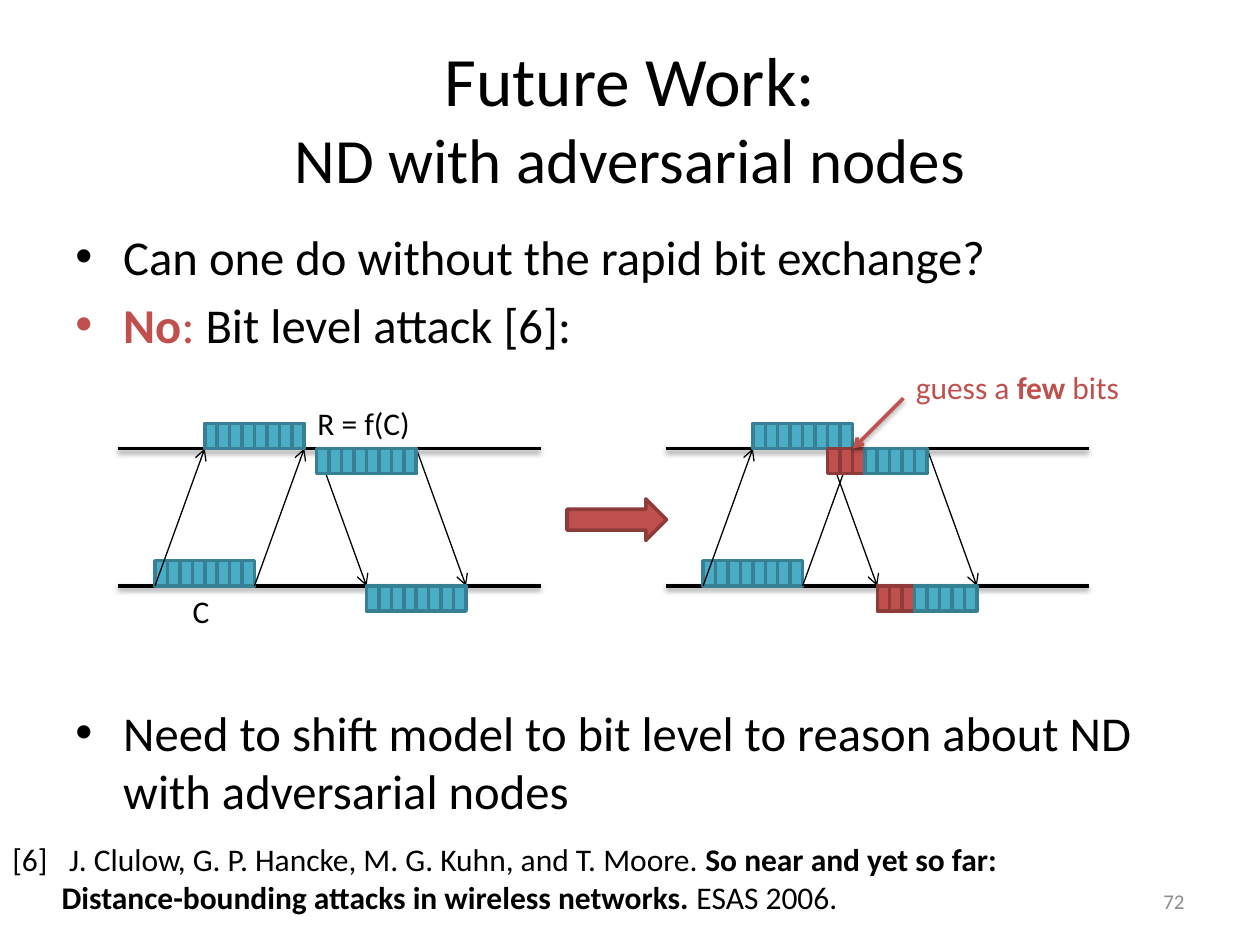
from lxml import etree
from pptx import Presentation
from pptx.dml.color import RGBColor
from pptx.enum import shapes, text
from pptx.oxml import ns
from pptx.util import Inches, Pt

BLACK = RGBColor(0x00, 0x00, 0x00)
GRAY = RGBColor(0x8C, 0x8C, 0x8C)
RED = RGBColor(0xC0, 0x50, 0x4D)
DARK_RED = RGBColor(0x8E, 0x3B, 0x39)
TEAL = RGBColor(0x4B, 0xAC, 0xC6)
DARK_TEAL = RGBColor(0x37, 0x7F, 0x92)

PACKET_BITS = 8
PACKET_WIDTH = 0.79
BIT = PACKET_WIDTH / PACKET_BITS
BIT_HEIGHT = 0.2
UPPER, LOWER = 3.56, 4.65  # the two node timelines
FLIGHT = 4  # signal travel time, in bits

deck = Presentation()
deck.slide_width, deck.slide_height = Inches(10), Inches(7.5)
page = deck.slides.add_slide(deck.slide_layouts[6])


def add_text(left, top, width, height, paragraphs, align=text.PP_ALIGN.LEFT,
             anchor=text.MSO_ANCHOR.TOP, wrap=True):
    """Each paragraph is a list of (words, size, color, bold) runs."""
    box = page.shapes.add_textbox(Inches(left), Inches(top), Inches(width), Inches(height))
    box.text_frame.word_wrap = wrap
    box.text_frame.vertical_anchor = anchor
    for number, runs in enumerate(paragraphs):
        para = box.text_frame.add_paragraph() if number else box.text_frame.paragraphs[0]
        para.alignment = align
        for words, size, color, bold in runs:
            span = para.add_run()
            span.text = words
            span.font.name = "Calibri"
            span.font.size = Pt(size)
            span.font.color.rgb = color
            span.font.bold = bold
    return box.text_frame.paragraphs


def add_line(x1, y1, x2, y2, color, weight, arrow=False, shadow=False):
    line = page.shapes.add_connector(shapes.MSO_CONNECTOR.STRAIGHT, Inches(x1), Inches(y1),
                                     Inches(x2), Inches(y2))
    line.line.color.rgb = color
    line.line.width = Pt(weight)
    if arrow:
        etree.SubElement(line.line._get_or_add_ln(), ns.qn("a:tailEnd"), type="arrow")
    effects = etree.SubElement(line._element.spPr, ns.qn("a:effectLst"))
    if shadow:
        outer = etree.SubElement(effects, ns.qn("a:outerShdw"), blurRad=str(Pt(3.1)),
                                 dist=str(Pt(1.6)), dir="5400000", rotWithShape="0")
        shade = etree.SubElement(outer, ns.qn("a:srgbClr"), val=str(BLACK))
        etree.SubElement(shade, ns.qn("a:alpha"), val="38000")


# Title and bullets
add_text(0.5, 0.3, 9, 1.25,
         [[("Future Work:", 39.6, BLACK, False)],
          [("ND with adversarial nodes", 36, BLACK, False)]],
         text.PP_ALIGN.CENTER, text.MSO_ANCHOR.MIDDLE)

question = add_text(0.5, 1.75, 9, 1.15, [
    [("Can one do without the rapid bit exchange?", 27.8, BLACK, False)],
    [("No", 27.8, RED, True), (":", 27.8, RED, False),
     (" Bit level attack [6]:", 27.8, BLACK, False)]])
conclusion = add_text(0.5, 5.53, 9, 1.1, [
    [("Need to shift model to bit level to reason about ND with adversarial nodes",
      27.8, BLACK, False)]])
for para in question + conclusion:
    para.space_before = Pt(5.56)
    props = para._p.get_or_add_pPr()
    props.set("marL", str(Inches(0.38)))
    props.set("indent", str(Inches(-0.38)))
    etree.SubElement(props, ns.qn("a:buFont"), typeface="Arial")
    etree.SubElement(props, ns.qn("a:buChar"), char="•")

add_text(7.17, 6.95, 2.33, 0.4, [[("72", 12, GRAY, False)]],
         text.PP_ALIGN.RIGHT, text.MSO_ANCHOR.MIDDLE)

# Timelines: (start of the challenge, reply offset in bits, guessed bits)
for start, reply, guessed in ((1.23, 13, 0), (5.58, 10, 3)):
    for lane in (LOWER, UPPER):
        add_line(start - 3 * BIT, lane, start + 31 * BIT, lane, BLACK, 2, shadow=True)

    packets = ((0, LOWER - BIT_HEIGHT, 0), (FLIGHT, UPPER - BIT_HEIGHT, 0),
               (reply, UPPER, guessed), (reply + FLIGHT, LOWER, guessed))
    for order, (offset, top, red_bits) in enumerate(packets):
        packet = page.shapes.add_group_shape()
        for index in range(PACKET_BITS):
            bit = packet.shapes.add_shape(
                shapes.MSO_SHAPE.RECTANGLE, Inches(start + (offset + index) * BIT),
                Inches(top), Inches(BIT), Inches(BIT_HEIGHT))
            is_guess = index < red_bits
            bit.shadow.inherit = False
            bit.fill.solid()
            bit.fill.fore_color.rgb = RED if is_guess else TEAL
            bit.line.color.rgb = DARK_RED if is_guess else DARK_TEAL
            bit.line.width = Pt(2)
        if order == 0:  # signals lie above the challenge, below the other packets
            for sent, origin, target in ((0, LOWER, UPPER), (PACKET_BITS, LOWER, UPPER),
                                         (reply, UPPER, LOWER),
                                         (reply + PACKET_BITS, UPPER, LOWER)):
                add_line(start + sent * BIT, origin, start + (sent + FLIGHT) * BIT, target,
                         BLACK, 0.75, arrow=True)

# Step from the honest exchange to the attack
add_line(7.17, 3.16, 6.77, UPPER, RED, 2, arrow=True, shadow=True)
step = page.shapes.add_shape(shapes.MSO_SHAPE.RIGHT_ARROW, Inches(4.5), Inches(3.96),
                             Inches(PACKET_WIDTH), Inches(0.33))
step.shadow.inherit = False
step.fill.solid()
step.fill.fore_color.rgb = RED
step.line.color.rgb = DARK_RED
step.line.width = Pt(2)

# Labels
add_text(7.17, 2.87, 1.83, 0.4, [[("guess a ", 18, RED, False), ("few ", 18, RED, True),
                                  ("bits", 18, RED, False)]], wrap=False)
add_text(1.43, LOWER, 0.34, 0.4, [[("C", 18, BLACK, False)]], wrap=False)
add_text(2.42, 3.16, 0.95, 0.4, [[("R = f(C)", 18, BLACK, False)]], wrap=False)

# Reference
first, second = add_text(0, 6.62, 10, 0.71, [
    [("[6]\tJ. Clulow, G. P. Hancke, M. G. Kuhn, and T. Moore. ", 18, BLACK, False),
     ("So near and yet so far:", 18, BLACK, True)],
    [("Distance-bounding attacks in wireless networks.", 18, BLACK, True),
     (" ESAS 2006.", 18, BLACK, False)]])
tabs = etree.SubElement(first._p.get_or_add_pPr(), ns.qn("a:tabLst"))
etree.SubElement(tabs, ns.qn("a:tab"), pos=str(Inches(0.45)), algn="l")
second._p.get_or_add_pPr().set("marL", str(Inches(0.39)))

deck.save("out.pptx")
